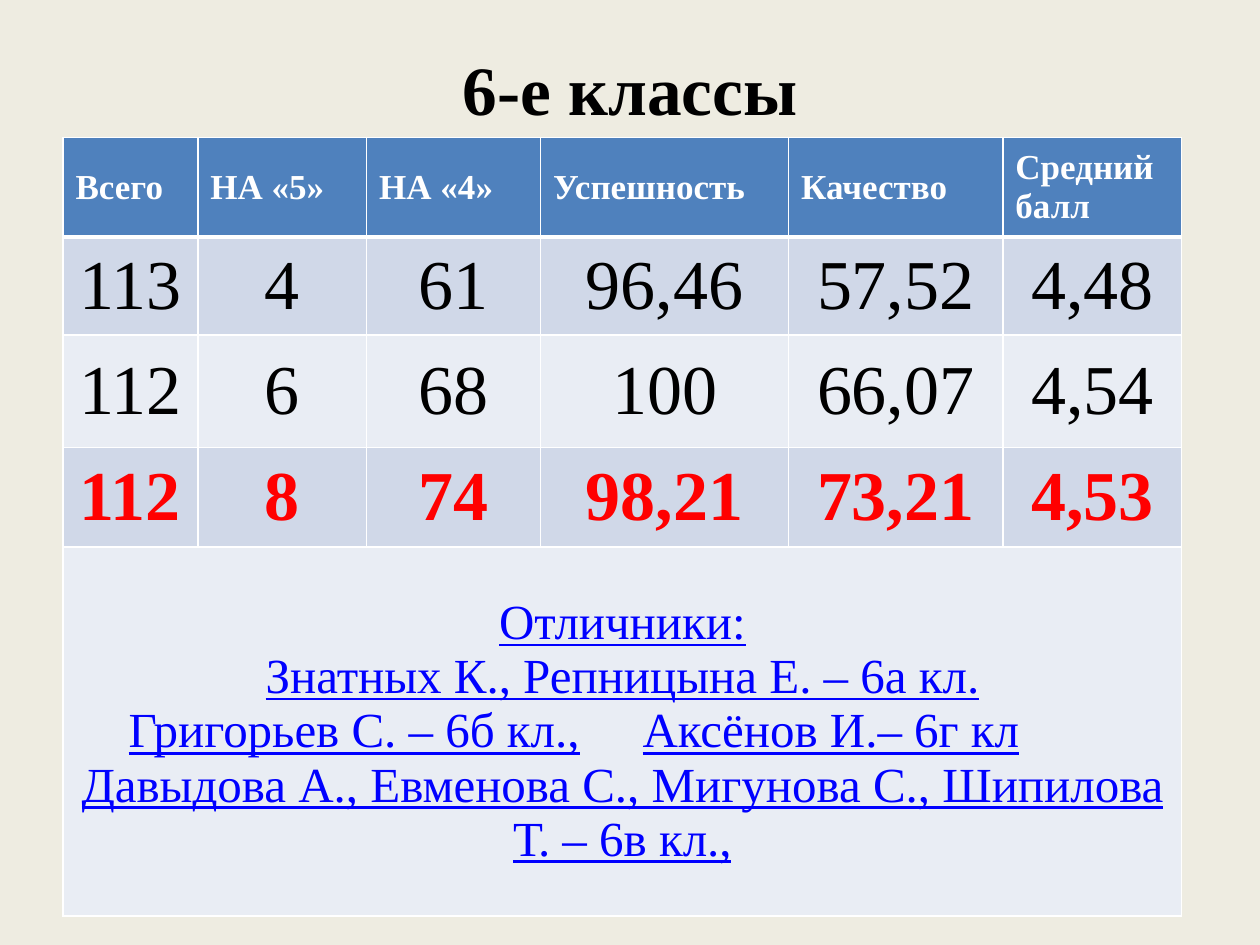
"""Build the results slide for the sixth-grade classes."""
from dataclasses import dataclass

from lxml import etree
from pptx import Presentation
from pptx import util as u
from pptx.dml.color import RGBColor
from pptx.enum import text
from pptx.oxml import ns

COLORS = {
    "background": "EEECE1", "header": "4F81BD", "band": "D0D8E8", "light": "E9EDF4",
    "white": "FFFFFF", "black": "000000", "red": "FF0000", "blue": "0000FF",
}
FONT = "Times New Roman"
COLUMN_WIDTHS = (1.07, 1.34, 1.38, 1.97, 1.7, 1.42)
TABLE_LEFT, TABLE_TOP = 0.5, 1.09


@dataclass(frozen=True)
class Style:
    size: float
    color: str
    bold: bool = False
    underline: bool = False
    centered: bool = True


@dataclass(frozen=True)
class Row:
    height: float
    fill: str
    style: Style
    values: tuple[str, ...]
    bottom_border: float = 1


TITLE = Style(39.6, "black", bold=True)
HEADER = Style(20, "white", bold=True, centered=False)
FIGURES = Style(40, "black")
LATEST = Style(40, "red", bold=True)
HONOURS = Style(28, "blue", underline=True)

ROWS = (
    Row(0.79, "header", HEADER,
        ("Всего", "НА «5»", "НА «4»", "Успешность", "Качество", "Средний балл"), 3),
    Row(0.78, "band", FIGURES, ("113", "4", "61", "96,46", "57,52", "4,48")),
    Row(0.89, "light", FIGURES, ("112", "6", "68", "100", "66,07", "4,54")),
    Row(0.79, "band", LATEST, ("112", "8", "74", "98,21", "73,21", "4,53")),
    Row(2.93, "light", HONOURS, (
        "Отличники:\n"
        "Знатных К., Репницына Е. – 6а кл.\n"
        "Григорьев С. – 6б кл.,\tАксёнов И.– 6г кл\n"
        "Давыдова А., Евменова С., Мигунова С., Шипилова Т. – 6в кл.,",
    )),
)


def color(name: str) -> RGBColor:
    """Return a named palette colour."""
    return RGBColor.from_string(COLORS[name])


def write(frame, content: str, style: Style) -> None:
    """Fill a text frame and format each paragraph."""
    frame.text = content
    alignment = text.PP_ALIGN.CENTER if style.centered else text.PP_ALIGN.LEFT
    formats = {"name": FONT, "size": u.Pt(style.size),
               "bold": style.bold, "underline": style.underline}
    for paragraph in frame.paragraphs:
        paragraph.alignment = alignment
        for run in paragraph.runs:
            for attribute, value in formats.items():
                setattr(run.font, attribute, value)
            run.font.color.rgb = color(style.color)


def set_tab(paragraph, indent: float, position: float) -> None:
    """Start a line at an indent and place its second part at a tab stop."""
    paragraph.alignment = text.PP_ALIGN.LEFT
    properties = paragraph._p.get_or_add_pPr()
    properties.set("marL", "0")
    properties.set("indent", str(u.Inches(indent)))
    stops = etree.SubElement(properties, ns.qn("a:tabLst"))
    etree.SubElement(stops, ns.qn("a:tab"), pos=str(u.Inches(position)), algn="l")


def set_borders(cell, bottom: float) -> None:
    """Draw white borders around a cell."""
    properties = cell._tc.get_or_add_tcPr()
    widths = {"lnL": 1, "lnR": 1, "lnT": 1, "lnB": bottom}
    for index, (side, width) in enumerate(widths.items()):
        line = etree.Element(ns.qn(f"a:{side}"), w=str(u.Pt(width)))
        fill = etree.SubElement(line, ns.qn("a:solidFill"))
        etree.SubElement(fill, ns.qn("a:srgbClr"), val=COLORS["white"])
        properties.insert(index, line)


def add_results(slide) -> None:
    """Add the table of results and the list of top pupils."""
    frame = slide.shapes.add_table(
        len(ROWS), len(COLUMN_WIDTHS), u.Inches(TABLE_LEFT), u.Inches(TABLE_TOP),
        u.Inches(sum(COLUMN_WIDTHS)), u.Inches(sum(row.height for row in ROWS)))
    table = frame.table
    for column, width in zip(table.columns, COLUMN_WIDTHS):
        column.width = u.Inches(width)
    last = len(ROWS) - 1
    table.cell(last, 0).merge(table.cell(last, len(COLUMN_WIDTHS) - 1))
    for index, row in enumerate(ROWS):
        table.rows[index].height = u.Inches(row.height)
        for cell in table.rows[index].cells:
            cell.fill.solid()
            cell.fill.fore_color.rgb = color(row.fill)
            cell.vertical_anchor = text.MSO_ANCHOR.MIDDLE
            set_borders(cell, row.bottom_border)
        for cell, value in zip(table.rows[index].cells, row.values):
            write(cell.text_frame, value, row.style)
    set_tab(table.cell(last, 0).text_frame.paragraphs[2], 0.42, 4.98)


def add_title(slide) -> None:
    """Place and format the title."""
    title = slide.shapes.title
    box = {"left": 0.5, "top": 0.3, "width": 9, "height": 0.79}
    for attribute, value in box.items():
        setattr(title, attribute, u.Inches(value))
    title.text_frame.vertical_anchor = text.MSO_ANCHOR.MIDDLE
    write(title.text_frame, "6-е классы", TITLE)


def main() -> None:
    """Create and save the presentation."""
    presentation = Presentation()
    presentation.slide_width = u.Inches(10)
    presentation.slide_height = u.Inches(7.5)
    slide = presentation.slides.add_slide(presentation.slide_layouts[5])
    slide.background.fill.solid()
    slide.background.fill.fore_color.rgb = color("background")
    add_title(slide)
    add_results(slide)
    presentation.save("out.pptx")


if __name__ == "__main__":
    main()
